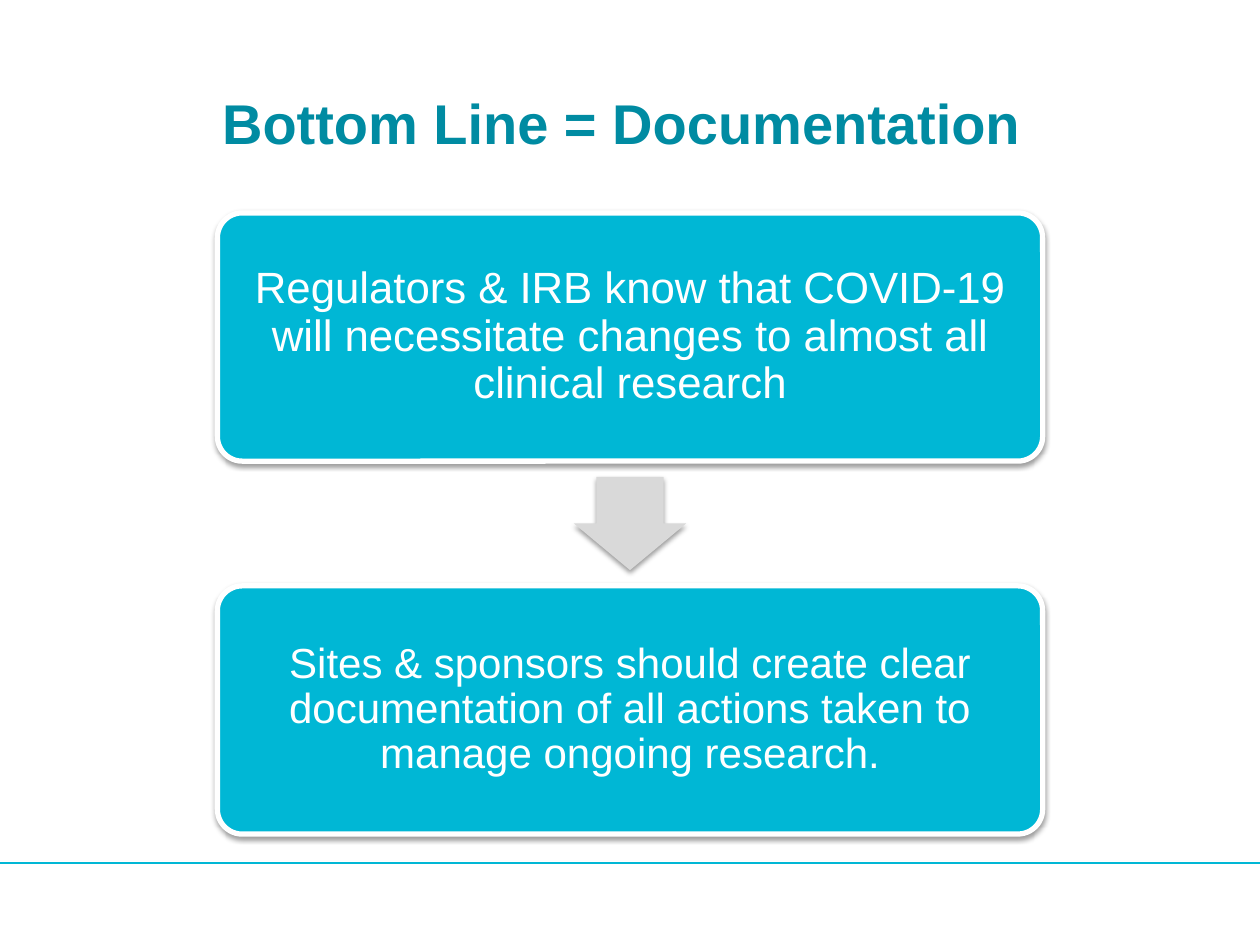
"""Build the slide on documentation as the bottom line."""
import pptx
import pptx.util
import pptx.dml.color
import pptx.enum.shapes
import pptx.enum.text
import lxml.etree

TITLE = "Bottom Line = Documentation "
STEPS = [
    ("Regulators & IRB know that COVID-19 will necessitate changes to almost all clinical research", 25),
    ("Sites & sponsors should create clear documentation of all actions taken to manage ongoing research.", 24),
]
THEME = {
    "font": "Arial", "title": "008BA2", "accent": "00B7D5",
    "white": "FFFFFF", "arrow": "D9D9D9", "shade": "000000",
    "title_size": 32, "border": 3, "rule": 0.75,
}
WIDE, HIGH = 10, 7.5
CARD_W, CARD_H, CARD_TOP, PITCH = 6.55, 1.97, 1.69, 2.96
ARROW_W, ARROW_H = 0.89, 0.74
BAND_TOP, RULE_TOP = 6.83, 6.85

Inches, Pt = pptx.util.Inches, pptx.util.Pt
SHAPE = pptx.enum.shapes.MSO_SHAPE
NS = "http://schemas.openxmlformats.org/drawingml/2006/main"


def color(name):
    return pptx.dml.color.RGBColor.from_string(THEME[name])


def add_shade(shape, dist, alpha):
    shape.shadow.inherit = False
    effects = shape._element.spPr.find(f"{{{NS}}}effectLst")
    outer = lxml.etree.SubElement(
        effects, f"{{{NS}}}outerShdw", blurRad=str(Pt(3.1)), dist=str(Pt(dist)),
        dir="5400000", rotWithShape="0")
    tint = lxml.etree.SubElement(outer, f"{{{NS}}}srgbClr", val=THEME["shade"])
    lxml.etree.SubElement(tint, f"{{{NS}}}alpha", val=str(alpha * 1000))


def add_block(slide, kind, box, fill, dist=1.6, alpha=38):
    shape = slide.shapes.add_shape(kind, *map(Inches, box))
    shape.fill.solid()
    shape.fill.fore_color.rgb = color(fill)
    shape.line.fill.background()
    add_shade(shape, dist, alpha)
    return shape


def set_text(shape, text, size, tone, inset, bold=False):
    frame = shape.text_frame
    frame.text = text
    frame.word_wrap = True
    frame.auto_size = pptx.enum.text.MSO_AUTO_SIZE.NONE
    frame.vertical_anchor = pptx.enum.text.MSO_ANCHOR.MIDDLE
    frame.margin_left = frame.margin_right = Inches(inset)
    frame.margin_top = frame.margin_bottom = Inches(inset)
    para = frame.paragraphs[0]
    para.alignment = pptx.enum.text.PP_ALIGN.CENTER
    para.font.name, para.font.size, para.font.bold = THEME["font"], Pt(size), bold
    para.font.color.rgb = color(tone)
    return para


def add_card(slide, top, text, size):
    box = ((WIDE - CARD_W) / 2, top, CARD_W, CARD_H)
    card = add_block(slide, SHAPE.ROUNDED_RECTANGLE, box, "accent")
    card.adjustments[0] = 0.1
    card.line.color.rgb = color("white")
    card.line.width = Pt(THEME["border"])
    set_text(card, text, size, "white", 0.1).line_spacing = 0.9


def add_arrow(slide, top):
    gap = PITCH - CARD_H
    box = ((WIDE - ARROW_W) / 2, top + (gap - ARROW_H) / 2, ARROW_W, ARROW_H)
    arrow = add_block(slide, SHAPE.DOWN_ARROW, box, "arrow")
    arrow.adjustments[0], arrow.adjustments[1] = 0.6, 0.5


def add_rule(slide):
    rule = slide.shapes.add_connector(
        pptx.enum.shapes.MSO_CONNECTOR.STRAIGHT,
        0, Inches(RULE_TOP), Inches(WIDE), Inches(RULE_TOP))
    rule.line.color.rgb = color("accent")
    rule.line.width = Pt(THEME["rule"])
    lxml.etree.SubElement(rule._element.spPr, f"{{{NS}}}effectLst")


def main():
    deck = pptx.Presentation()
    deck.slide_width, deck.slide_height = Inches(WIDE), Inches(HIGH)
    slide = deck.slides.add_slide(deck.slide_layouts[5])
    add_block(slide, SHAPE.RECTANGLE, (0, BAND_TOP, WIDE, HIGH - BAND_TOP), "white", 1.8, 35)
    add_rule(slide)
    title = slide.shapes.title
    title.left, title.top, title.width, title.height = map(Inches, (0.37, 0.55, 9.25, 0.84))
    set_text(title, TITLE, THEME["title_size"], "title", 0, True)
    for index, (text, size) in enumerate(STEPS):
        top = CARD_TOP + index * PITCH
        if index:
            add_arrow(slide, top - PITCH + CARD_H)
        add_card(slide, top, text, size)
    deck.save("out.pptx")


if __name__ == "__main__":
    main()
